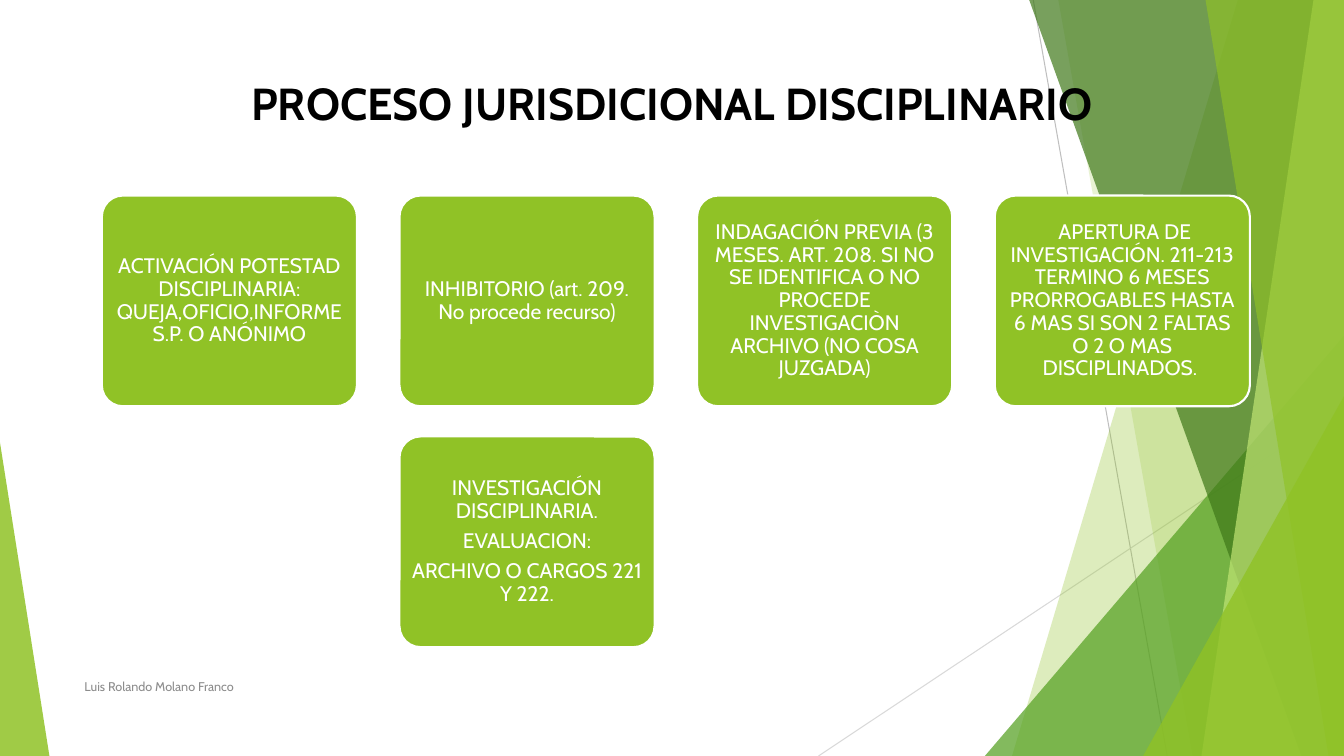
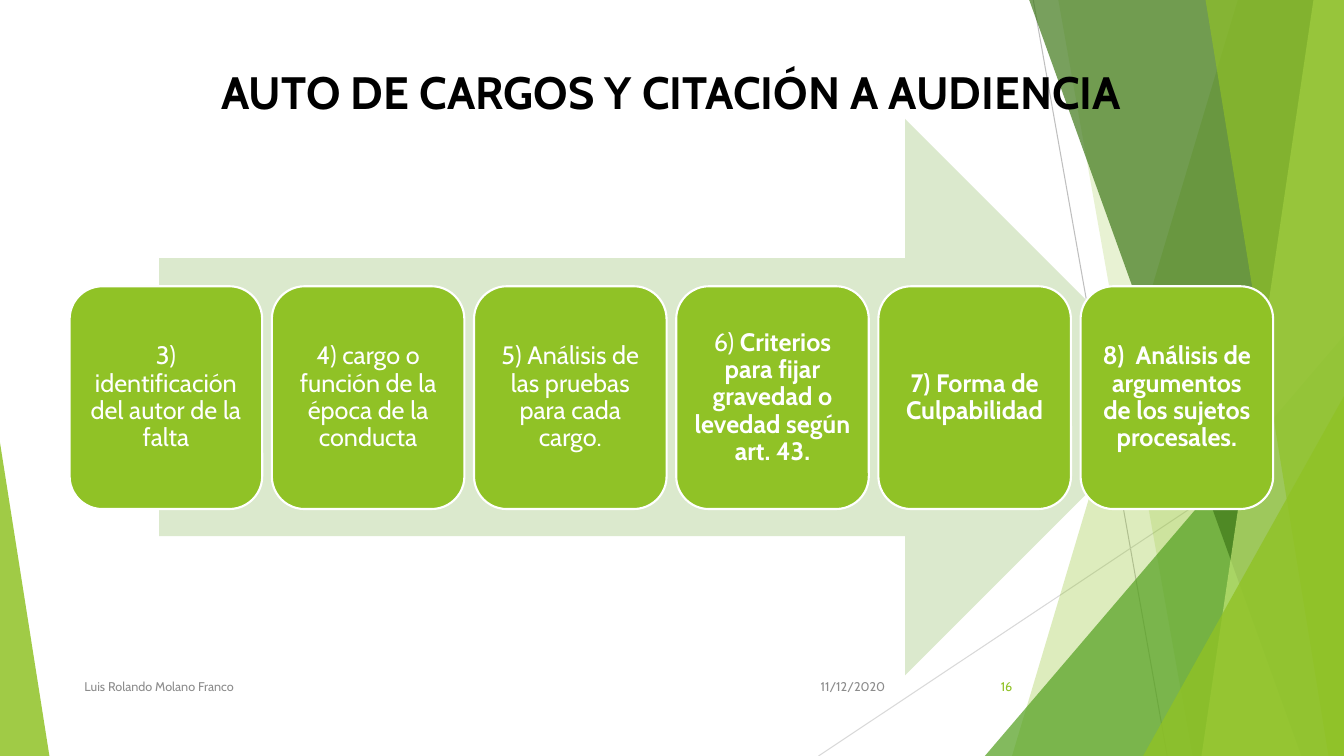
"""Build two slides on the disciplinary process."""
from dataclasses import dataclass
from typing import NamedTuple

from lxml.etree import SubElement as Sub
from pptx import Presentation
from pptx.dml.color import RGBColor as Rgb
from pptx.enum.shapes import MSO_CONNECTOR as Link, MSO_SHAPE as Kind
from pptx.enum.text import MSO_ANCHOR as Anchor, MSO_AUTO_SIZE as Fit, PP_ALIGN as Align
from pptx.oxml.ns import qn
from pptx.shapes.autoshape import Shape
from pptx.slide import Slide, SlideLayout
from pptx.text.text import TextFrame
from pptx.util import Inches, Pt

WIDE, HIGH = Inches(13.333), Inches(7.5)


@dataclass(frozen=True)
class Theme:
    """Hold the colours and type sizes."""
    font: str = "Cabin"
    lime: str = "90C226"
    leaf: str = "54A021"
    moss: str = "3F7819"
    pale: str = "C0E474"
    mist: str = "DBE9CD"
    rule: str = "BFBFBF"
    thin: str = "D9D9D9"
    gray: str = "8C8C8C"
    ink: str = "000000"
    white: str = "FFFFFF"
    head: float = 32
    small: float = 9
    edge: float = 1.5
    hair: float = 0.75


T = Theme()


class Box(NamedTuple):
    """Give a place in percent of the slide."""
    left: float
    top: float
    width: float
    height: float

    def emu(self) -> tuple[int, int, int, int]:
        """Return the place as lengths."""
        return px(self.left), py(self.top), px(self.width), py(self.height)


class Quad(NamedTuple):
    """Describe a pane from a slanted side to the right edge."""
    top: float
    foot: float
    color: str
    alpha: int


class Peak(NamedTuple):
    """Describe a right triangle that stands on the bottom edge."""
    left: float
    top: float
    width: float
    tip: int
    color: str
    alpha: int


class Ray(NamedTuple):
    """Describe a thin line."""
    x1: float
    y1: float
    x2: float
    y2: float
    color: str


class Card(NamedTuple):
    """Describe a card in a grid."""
    col: int
    row: int
    text: tuple[str, ...]
    bold: bool = False
    lead: str = ""


@dataclass(frozen=True)
class Grid:
    """Describe a grid of equal cards."""
    left: float
    right: float
    cols: int
    width: float
    height: float
    tops: tuple[float, ...]
    size: float
    round: float
    pad: float

    def cell(self, card: Card) -> Box:
        """Return the place of a card."""
        step = (self.right - self.left - self.width) / (self.cols - 1)
        return Box(self.left + card.col * step, self.tops[card.row], self.width, self.height)


class Note(NamedTuple):
    """Describe a footer text."""
    left: float
    width: float
    text: str
    align: Align
    color: str


RAYS = (Ray(76.88, 0, 86.85, 100, T.rule), Ray(100, 53.73, 60.9, 100, T.thin))
PANES = (
    Quad(92.1, 75.3, T.lime, 30),
    Quad(78.75, 88.73, T.lime, 20),
    Peak(73.28, 44.4, 26.72, 1, T.leaf, 72),
    Quad(76.58, 96.83, T.moss, 70),
    Quad(97.73, 89.4, T.pale, 70),
    Quad(89.7, 98.85, T.lime, 65),
    Peak(85.05, 52.4, 14.95, 1, T.lime, 80),
    Peak(0, 58.53, 3.68, 0, T.lime, 85),
)
NAME = Note(5.55, 51.68, "Luis Rolando Molano Franco", Align.LEFT, T.gray)
DATE = Note(59.1, 7.5, "11/12/2020", Align.RIGHT, T.gray)
PAGE = Note(70.43, 5.63, "16", Align.RIGHT, T.lime)

STEPS = Grid(7.58, 93, 4, 18.98, 27.87, (25.87, 57.73), 15, 0.1, 0.06)
STAGES = (
    Card(0, 0, ("ACTIVACIÓN POTESTAD DISCIPLINARIA: QUEJA,OFICIO,INFORME S.P. O ANÓNIMO",)),
    Card(1, 0, ("INHIBITORIO (art. 209. No procede recurso)",)),
    Card(1, 1, ("INVESTIGACIÓN DISCIPLINARIA.", "EVALUACION:", "ARCHIVO O CARGOS 221 Y 222.")),
    Card(2, 0, ("INDAGACIÓN PREVIA (3 MESES. ART. 208. SI NO SE IDENTIFICA O NO PROCEDE "
                "INVESTIGACIÒN ARCHIVO (NO COSA JUZGADA)",)),
    Card(3, 0, (" APERTURA DE INVESTIGACIÓN. 211-213 TERMINO 6 MESES PRORROGABLES HASTA "
                "6 MAS SI SON 2 FALTAS O 2 O MAS DISCIPLINADOS. ",)),
)
PARTS = Grid(5.18, 94.73, 6, 14.33, 29.47, (37.87,), 18, 0.17, 0.07)
CHARGES = (
    Card(0, 0, ("3) identificación del autor de la falta",)),
    Card(1, 0, ("4) cargo o función de la época de la conducta",)),
    Card(2, 0, ("5) Análisis de las pruebas para cada cargo.",)),
    Card(3, 0, ("Criterios para fijar gravedad o levedad según art. 43.",), True, "6) "),
    Card(4, 0, ("7) Forma de Culpabilidad",), True),
    Card(5, 0, ("8)  Análisis de argumentos de los sujetos procesales.",), True),
)
ARROW = Box(11.85, 15.73, 76.2, 73.6)


def px(share: float) -> int:
    """Turn a share of the width into a length."""
    return round(WIDE * share / 100)


def py(share: float) -> int:
    """Turn a share of the height into a length."""
    return round(HIGH * share / 100)


def paint(shape: Shape, color: str, alpha: int = 100) -> None:
    """Fill a shape flat, without line or shadow."""
    shape.shadow.inherit = False
    shape.line.fill.background()
    shape.fill.solid()
    shape.fill.fore_color.rgb = Rgb.from_string(color)
    if alpha < 100:
        tint = shape.element.spPr.find(qn("a:solidFill"))[0]
        Sub(tint, qn("a:alpha"), val=str(alpha * 1000))


def write(frame: TextFrame, texts: tuple[str, ...], size: float, color: str,
          align: Align, bold: bool = False, lead: str = "") -> None:
    """Write paragraphs in one style, with an optional plain lead."""
    frame.word_wrap = True
    for i, text in enumerate(texts):
        para = frame.add_paragraph() if i else frame.paragraphs[0]
        para.alignment = align
        font = para.font
        font.name, font.size, font.bold = T.font, Pt(size), bold
        font.color.rgb = Rgb.from_string(color)
        if lead:
            start = para.add_run()
            start.text, start.font.bold = lead, False
        para.add_run().text = text


def add_ray(slide: Slide, ray: Ray) -> None:
    """Draw a thin line."""
    line = slide.shapes.add_connector(
        Link.STRAIGHT, px(ray.x1), py(ray.y1), px(ray.x2), py(ray.y2))
    line.line.color.rgb = Rgb.from_string(ray.color)
    line.line.width = Pt(T.hair)
    Sub(line.element.spPr, qn("a:effectLst"))


def add_pane(slide: Slide, pane: Quad | Peak) -> None:
    """Draw a clear pane."""
    if isinstance(pane, Quad):
        path = slide.shapes.build_freeform(px(pane.top), 0)
        path.add_line_segments([(WIDE, 0), (WIDE, HIGH), (px(pane.foot), HIGH)], close=True)
        shape = path.convert_to_shape()
    else:
        box = Box(pane.left, pane.top, pane.width, 100 - pane.top)
        shape = slide.shapes.add_shape(Kind.ISOSCELES_TRIANGLE, *box.emu())
        shape.adjustments[0] = pane.tip
    paint(shape, pane.color, pane.alpha)


def dress(slide: Slide, layout: SlideLayout) -> None:
    """Draw the panes and hand them to the layout."""
    for ray in RAYS:
        add_ray(slide, ray)
    for pane in PANES:
        add_pane(slide, pane)
    for spot in list(layout.placeholders):
        if spot.placeholder_format.idx:
            layout.shapes.element.remove(spot.element)
    for shape in list(slide.shapes):
        if not shape.is_placeholder:
            layout.shapes.element.append(shape.element)


def add_title(slide: Slide, text: str, box: Box, size: float = T.head) -> None:
    """Place and write the title."""
    title = slide.shapes.title
    title.left, title.top, title.width, title.height = box.emu()
    frame = title.text_frame
    frame.auto_size, frame.vertical_anchor = Fit.NONE, Anchor.TOP
    write(frame, (text,), size, T.ink, Align.CENTER, True)


def add_cards(slide: Slide, grid: Grid, cards: tuple[Card, ...]) -> None:
    """Draw the cards of a grid."""
    for card in cards:
        shape = slide.shapes.add_shape(Kind.ROUNDED_RECTANGLE, *grid.cell(card).emu())
        shape.adjustments[0] = grid.round
        paint(shape, T.lime)
        shape.line.color.rgb = Rgb.from_string(T.white)
        shape.line.width = Pt(T.edge)
        frame = shape.text_frame
        frame.vertical_anchor = Anchor.MIDDLE
        frame.margin_left = frame.margin_right = Inches(grid.pad)
        frame.margin_top = frame.margin_bottom = Inches(grid.pad)
        write(frame, card.text, grid.size, T.white, Align.CENTER, card.bold, card.lead)
        for para in frame.paragraphs:
            para.line_spacing, para.space_after = 0.9, Pt(0.35 * grid.size)


def add_notes(slide: Slide, *notes: Note) -> None:
    """Write the footer texts."""
    for note in notes:
        box = Box(note.left, 88.13, note.width, 5.33)
        frame = slide.shapes.add_textbox(*box.emu()).text_frame
        frame.vertical_anchor = Anchor.MIDDLE
        write(frame, (note.text,), T.small, note.color, note.align)


def main() -> None:
    """Build and save the deck."""
    deck = Presentation()
    deck.slide_width, deck.slide_height = WIDE, HIGH
    layout = deck.slide_layouts[5]

    trial = deck.slides.add_slide(layout)
    dress(trial, layout)
    add_title(trial, "PROCESO JURISDICIONAL DISCIPLINARIO", Box(10.65, 9.33, 78.75, 8.67))
    add_cards(trial, STEPS, STAGES)
    add_notes(trial, NAME)

    charge = deck.slides.add_slide(layout)
    add_title(charge, "AUTO DE CARGOS Y CITACIÓN A AUDIENCIA ", Box(8.18, 7.87, 84.3, 7.87), 32.4)
    paint(charge.shapes.add_shape(Kind.RIGHT_ARROW, *ARROW.emu()), T.mist)
    add_cards(charge, PARTS, CHARGES)
    add_notes(charge, DATE, NAME, PAGE)

    deck.save("out.pptx")


if __name__ == "__main__":
    main()
